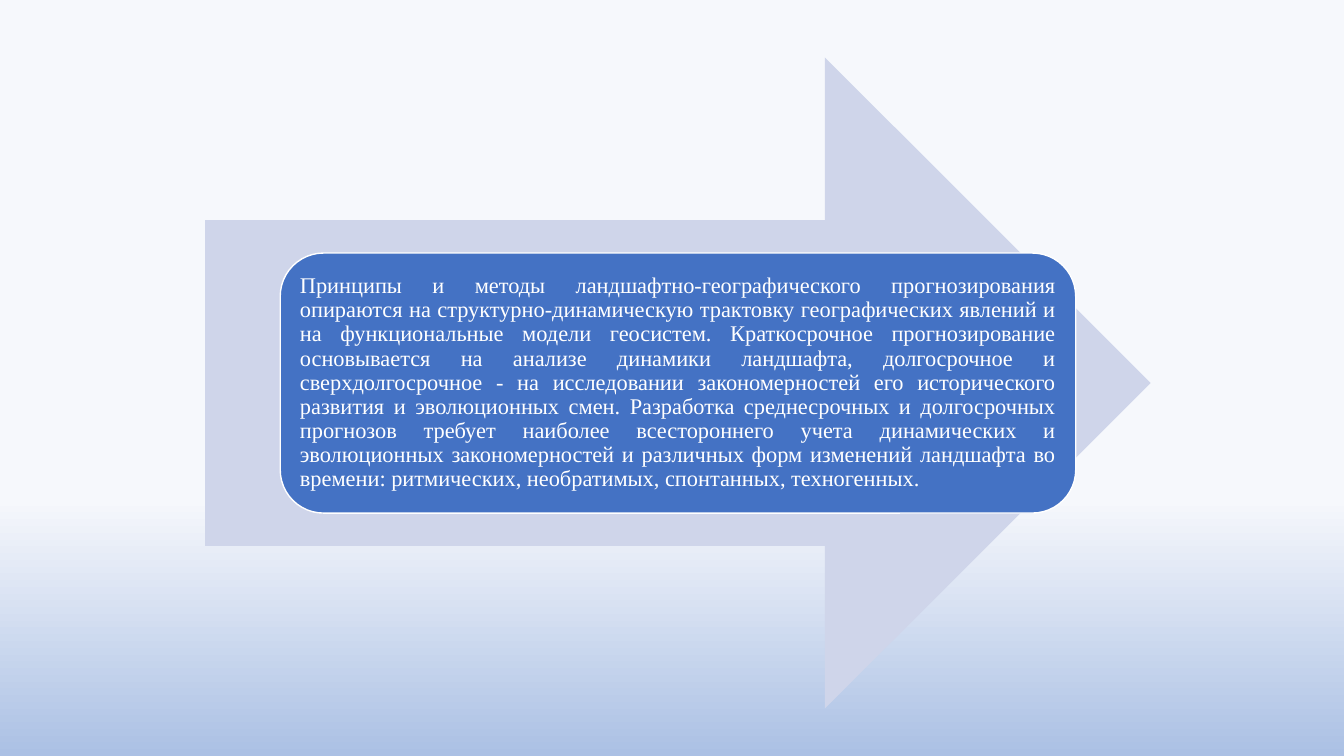
from dataclasses import dataclass
from typing import Optional

from pptx import Presentation
from pptx.dml.color import RGBColor
from pptx.enum.shapes import MSO_SHAPE
from pptx.enum.text import MSO_ANCHOR, PP_ALIGN
from pptx.shapes.autoshape import Shape
from pptx.slide import Slide
from pptx.util import Inches, Pt

SLIDE_WIDTH = Inches(13.33)
SLIDE_HEIGHT = Inches(7.5)

PRINCIPLES = (
    "Принципы и методы ландшафтно-географического прогнозирования опираются "
    "на структурно-динамическую трактовку географических явлений и на "
    "функциональные модели геосистем. Краткосрочное прогнозирование "
    "основывается на анализе динамики ландшафта, долгосрочное и "
    "сверхдолгосрочное - на исследовании закономерностей его исторического "
    "развития и эволюционных смен. Разработка среднесрочных и долгосрочных "
    "прогнозов требует наиболее всестороннего учета динамических и "
    "эволюционных закономерностей и различных форм изменений ландшафта во "
    "времени: ритмических, необратимых, спонтанных, техногенных."
)


@dataclass(frozen=True)
class Block:
    preset: MSO_SHAPE
    left: float
    top: float
    width: float
    height: float
    fill: str
    outline: Optional[str] = None


ARROW = Block(MSO_SHAPE.RIGHT_ARROW, 15.27, 7.6, 70.34, 86.13, "CFD5EA")
STATEMENT = Block(
    MSO_SHAPE.ROUNDED_RECTANGLE, 20.85, 33.47, 59.19, 34.4, "4472C4", "FFFFFF"
)


def color(value: str) -> RGBColor:
    return RGBColor.from_string(value)


def across(percent: float) -> int:
    return round(SLIDE_WIDTH * percent / 100)


def down(percent: float) -> int:
    return round(SLIDE_HEIGHT * percent / 100)


def paint_background(slide: Slide, upper: str, lower: str, start: float) -> None:
    fill = slide.background.fill
    fill.gradient()
    fill.gradient_angle = 270
    for stop, shade, position in zip(fill.gradient_stops, (upper, lower), (start, 1)):
        stop.color.rgb = color(shade)
        stop.position = position


def draw_block(slide: Slide, block: Block) -> Shape:
    shape = slide.shapes.add_shape(
        block.preset,
        across(block.left),
        down(block.top),
        across(block.width),
        down(block.height),
    )
    shape.shadow.inherit = False
    shape.fill.solid()
    shape.fill.fore_color.rgb = color(block.fill)
    if block.outline:
        shape.line.color.rgb = color(block.outline)
        shape.line.width = Pt(1)
    else:
        shape.line.fill.background()
    return shape


def write_text(
    shape: Shape,
    text: str,
    *,
    font: str = "Times New Roman",
    size: float = 16,
    shade: str = "FFFFFF",
    align: PP_ALIGN = PP_ALIGN.JUSTIFY,
    line_spacing: float = 0.9,
    inset: float = 0.07,
) -> None:
    frame = shape.text_frame
    frame.word_wrap = True
    frame.vertical_anchor = MSO_ANCHOR.MIDDLE
    frame.margin_left = frame.margin_right = Inches(inset)
    frame.margin_top = frame.margin_bottom = Inches(inset)
    paragraph = frame.paragraphs[0]
    paragraph.alignment = align
    paragraph.line_spacing = line_spacing
    run = paragraph.add_run()
    run.text = text
    run.font.name = font
    run.font.size = Pt(size)
    run.font.color.rgb = color(shade)


def main() -> None:
    presentation = Presentation()
    presentation.slide_width = SLIDE_WIDTH
    presentation.slide_height = SLIDE_HEIGHT
    slide = presentation.slides.add_slide(presentation.slide_layouts[6])
    paint_background(slide, "F6F8FC", "ABC0E4", 0.66)
    draw_block(slide, ARROW)
    write_text(draw_block(slide, STATEMENT), PRINCIPLES)
    presentation.save("out.pptx")


if __name__ == "__main__":
    main()
